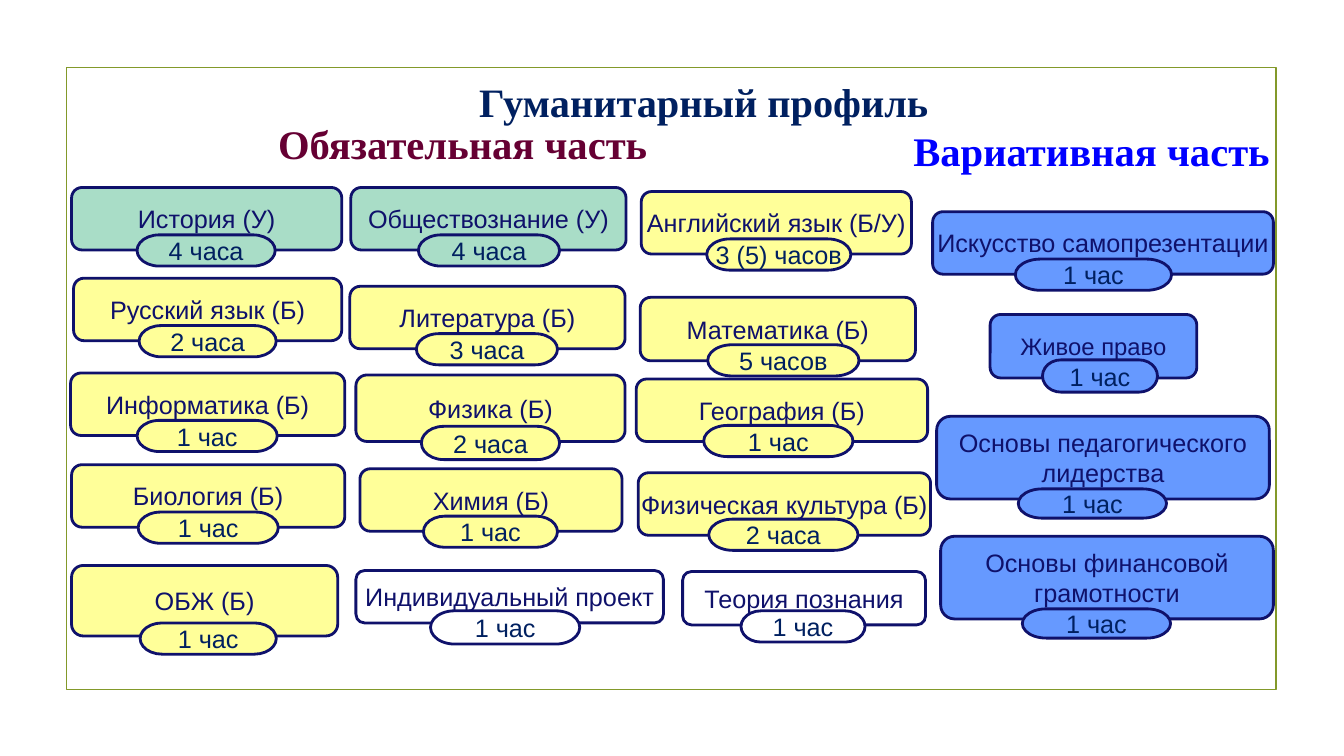
import pptx
import pptx.dml.color
import pptx.enum.shapes
import pptx.enum.text
import pptx.util
from pptx.util import Inches

SHAPE = pptx.enum.shapes.MSO_SHAPE
ALIGN = pptx.enum.text.PP_ALIGN
ANCHOR = pptx.enum.text.MSO_ANCHOR

INK, NAVY, OLIVE = "0F116B", "002060", "83992A"
GREEN, YELLOW, WHITE, BLUE = "A9DDC7", "FFFF99", "FFFFFF", "6699FF"

# Subject, its box, hours, their pill (left, top, width, height), fill
SUBJECTS = [
    # First column
    ("История (У)", (0.71, 1.86, 2.68, 0.62), "4 часа", (1.36, 2.33, 1.37, 0.31), GREEN),
    ("Русский язык (Б)", (0.73, 2.76, 2.66, 0.62), "2 часа", (1.38, 3.23, 1.36, 0.31), YELLOW),
    ("Информатика (Б)", (0.7, 3.7, 2.72, 0.62), "1 час", (1.36, 4.17, 1.39, 0.31), YELLOW),
    ("Биология (Б)", (0.71, 4.61, 2.71, 0.62), "1 час", (1.37, 5.08, 1.39, 0.31), YELLOW),
    ("ОБЖ (Б)", (0.71, 5.61, 2.64, 0.7), "1 час", (1.39, 6.18, 1.35, 0.31), YELLOW),
    # Second column
    ("Обществознание (У)", (3.48, 1.86, 2.73, 0.62), "4 часа", (4.15, 2.33, 1.4, 0.31), GREEN),
    ("Литература (Б)", (3.47, 2.84, 2.73, 0.62), "3 часа", (4.13, 3.31, 1.4, 0.31), YELLOW),
    ("Физика (Б)", (3.53, 3.72, 2.67, 0.66), "2 часа", (4.18, 4.23, 1.37, 0.33), YELLOW),
    ("Химия (Б)", (3.57, 4.65, 2.6, 0.62), "1 час", (4.2, 5.12, 1.33, 0.31), YELLOW),
    ("Индивидуальный проект", (3.53, 5.66, 3.05, 0.52), "1 час", (4.27, 6.06, 1.48, 0.33), WHITE),
    # Third column
    ("Английский язык (Б/У)", (6.36, 1.9, 2.68, 0.62), "3 (5) часов", (7.01, 2.37, 1.43, 0.31), YELLOW),
    ("Математика (Б)", (6.35, 2.95, 2.73, 0.63), "5 часов", (7.02, 3.42, 1.5, 0.31), YELLOW),
    ("География (Б)", (6.31, 3.76, 2.89, 0.62), "1 час", (6.98, 4.22, 1.48, 0.31), YELLOW),
    ("Физическая культура (Б)", (6.33, 4.69, 2.9, 0.62), "2 часа", (7.03, 5.15, 1.48, 0.31), YELLOW),
    ("Теория познания", (6.77, 5.67, 2.41, 0.53), "1 час", (7.35, 6.06, 1.23, 0.31), WHITE),
    # Elective column
    ("Искусство самопрезентации", (9.25, 2.1, 3.38, 0.62), "1 час", (10.07, 2.57, 1.55, 0.31), BLUE),
    ("Живое право", (9.82, 3.12, 2.05, 0.63), "1 час", (10.34, 3.57, 1.14, 0.32), BLUE),
    ("Основы педагогического\nлидерства", (9.29, 4.13, 3.3, 0.82), "1 час", (10.1, 4.85, 1.47, 0.29), BLUE),
    ("Основы финансовой\nграмотности", (9.33, 5.32, 3.3, 0.82), "1 час", (10.14, 6.04, 1.47, 0.29), BLUE),
]
SMALLER_NAMES = {"Живое право": 17}


def rgb(color):
    return pptx.dml.color.RGBColor.from_string(color)


def inches(box):
    return [Inches(length) for length in box]


def write(shape, text, size=18, font="Arial", color=INK, bold=False,
          align=ALIGN.CENTER, anchor=ANCHOR.MIDDLE, wrap=False):
    frame = shape.text_frame
    frame.text = text
    frame.word_wrap = wrap
    frame.auto_size = pptx.enum.text.MSO_AUTO_SIZE.NONE
    frame.vertical_anchor = anchor
    for paragraph in frame.paragraphs:
        paragraph.alignment = align
        paragraph.font.size = pptx.util.Pt(size)
        paragraph.font.name = font
        paragraph.font.bold = bold
        paragraph.font.color.rgb = rgb(color)


def add_outlined(shapes, preset, box, line, width, fill=None):
    shape = shapes.add_shape(preset, *inches(box))
    shape.shadow.inherit = False
    shape.line.color.rgb = rgb(line)
    shape.line.width = pptx.util.Pt(width)
    if fill:
        shape.fill.solid()
        shape.fill.fore_color.rgb = rgb(fill)
    else:
        shape.fill.background()
    return shape


def add_title(slide, text):
    title = slide.shapes.title
    title.left, title.top, title.width, title.height = inches((2.31, 0.71, 9.34, 0.6))
    write(title, text, size=28.8, font="Times New Roman", color=NAVY, bold=True, wrap=True)


def add_heading(slide, text, box, color):
    heading = slide.shapes.add_textbox(*inches(box))
    write(heading, text, size=29, font="Times New Roman", color=color, bold=True,
          align=ALIGN.LEFT, anchor=ANCHOR.TOP)


def add_subject(slide, name, name_box, hours, hours_box, fill):
    card = slide.shapes.add_group_shape().shapes
    name_shape = add_outlined(card, SHAPE.FLOWCHART_ALTERNATE_PROCESS, name_box, INK, 2, fill)
    write(name_shape, name, size=SMALLER_NAMES.get(name, 18))
    pill = add_outlined(card, SHAPE.FLOWCHART_TERMINATOR, hours_box, INK, 2, fill)
    write(pill, hours, color=NAVY)


def main():
    deck = pptx.Presentation()
    deck.slide_width, deck.slide_height = Inches(13.33), Inches(7.5)
    slide = deck.slides.add_slide(deck.slide_layouts[5])

    # Frame and headings
    add_outlined(slide.shapes, SHAPE.RECTANGLE, (0.66, 0.67, 12, 6.17), OLIVE, 1.25)
    add_title(slide, "Гуманитарный профиль")
    add_heading(slide, "Обязательная часть", (2.66, 1.13, 3.9, 0.59), "660033")
    add_heading(slide, "Вариативная часть", (8.96, 1.2, 3.89, 0.61), "0000FF")

    # Subjects with their weekly hours
    for subject in SUBJECTS:
        add_subject(slide, *subject)

    deck.save("out.pptx")


if __name__ == "__main__":
    main()
